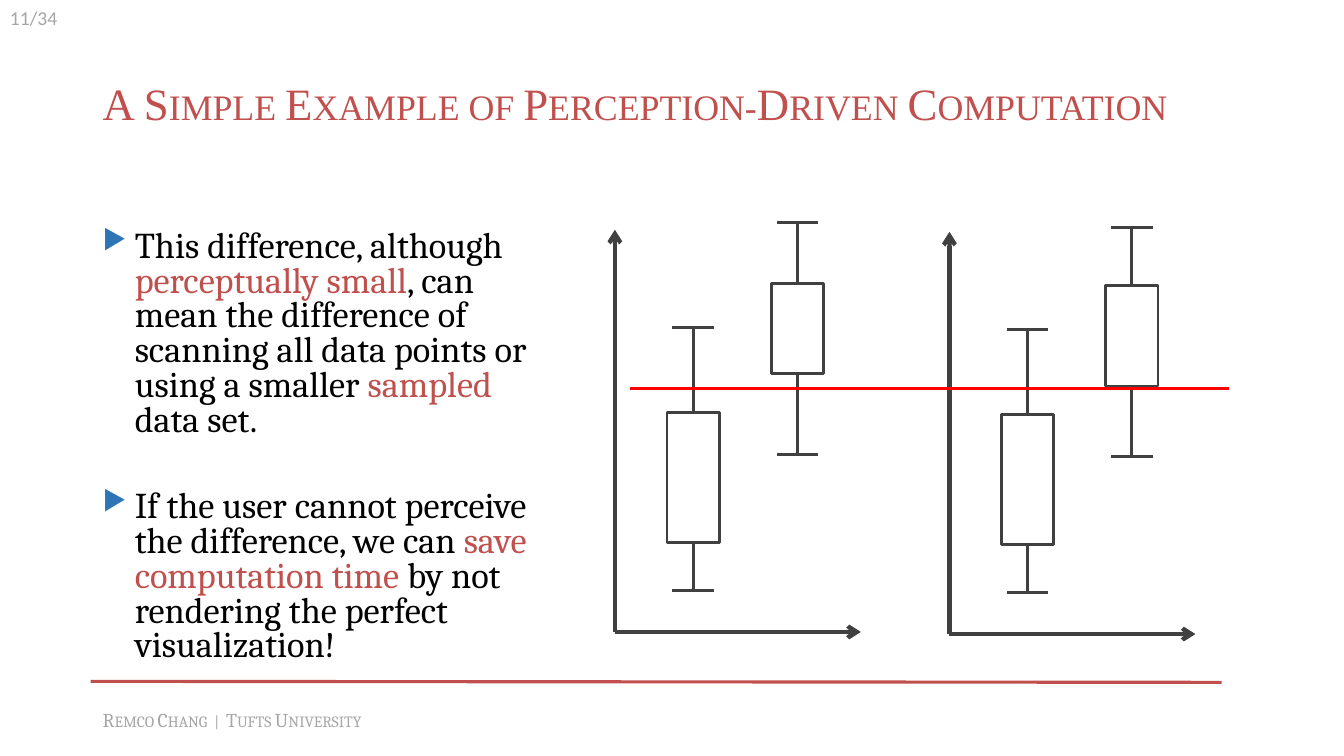
"""Build the slide on perception-driven computation with two box plots."""
from lxml.etree import SubElement
from pptx import Presentation
from pptx.dml.color import RGBColor
from pptx.enum.shapes import MSO_CONNECTOR, MSO_SHAPE
from pptx.enum.text import MSO_ANCHOR
from pptx.oxml.ns import qn
from pptx.util import Pt

COLORS = {
    "accent": "C0504D",
    "muted": "A6A6A6",
    "text": "000000",
    "bullet": "2E75B6",
    "plot": "404040",
    "threshold": "FF0000",
}

presentation = Presentation()
presentation.slide_width, presentation.slide_height = Pt(960), Pt(540)
slide = presentation.slides.add_slide(presentation.slide_layouts[6])


def add_line(start, end, color, width, arrow=False):
    ends = [Pt(value) for value in (*start, *end)]
    connector = slide.shapes.add_connector(MSO_CONNECTOR.STRAIGHT, *ends)
    connector.line.color.rgb = RGBColor.from_string(COLORS[color])
    connector.line.width = Pt(width)
    properties = connector._element.spPr
    if arrow:
        SubElement(properties.get_or_add_ln(), qn("a:tailEnd"), type="arrow")
    SubElement(properties, qn("a:effectLst"))
    return connector


def add_run(paragraph, text, font_format, color, small_caps=False):
    run = paragraph.add_run()
    run.text = text
    for name, value in font_format.items():
        setattr(run.font, name, value)
    run.font.color.rgb = RGBColor.from_string(COLORS[color])
    if small_caps:
        run._r.get_or_add_rPr().set("cap", "small")


add_line((64.8, 486.7), (872.6, 487.4), "accent", 2.25)

labels = [
    ("Remco Chang  |  Tufts University", (66.2, 501.8, 252.7, 24.5), "Cambria", 14, "muted", True),
    ("11/34", (0, 0.7, 200, 24.5), "Calibri", 14, "muted", False),
    ("A Simple Example of Perception-Driven Computation", (66.2, 40.3, 807.8, 65.5),
     "Times New Roman", 32, "accent", True),
]
for text, box, font_name, size, color, small_caps in labels:
    frame = slide.shapes.add_textbox(*[Pt(value) for value in box]).text_frame
    frame.word_wrap = True
    frame.vertical_anchor = MSO_ANCHOR.MIDDLE
    add_run(frame.paragraphs[0], text, {"name": font_name, "size": Pt(size)}, color, small_caps)

bullets = [
    [("This difference, although ", "text"), ("perceptually small", "accent"),
     (", can mean the difference of scanning all data points or using a smaller ", "text"),
     ("sampled", "accent"), (" data set.", "text")],
    [("If the user cannot perceive the difference, we can ", "text"),
     ("save computation time", "accent"),
     (" by not rendering the perfect visualization!", "text")],
]
body = slide.shapes.add_textbox(Pt(66.2), Pt(161), Pt(339.1), Pt(320)).text_frame
body.word_wrap = True
for index, runs in enumerate(bullets):
    paragraph = body.add_paragraph() if index else body.paragraphs[0]
    paragraph.line_spacing = 0.8
    paragraph.space_before = Pt(36.6 if index else 0)
    properties = paragraph._p.get_or_add_pPr()
    properties.set("marL", str(Pt(23)))
    properties.set("indent", str(Pt(-23)))
    bullet_color = SubElement(properties, qn("a:buClr"))
    SubElement(bullet_color, qn("a:srgbClr"), val=COLORS["bullet"])
    SubElement(properties, qn("a:buSzPct"), val="75000")
    SubElement(properties, qn("a:buChar"), char="▶")
    for text, color in runs:
        add_run(paragraph, text, {"name": "Cambria", "size": Pt(25.9)}, color)

box_width, cap_width = 37.4, 29.5
plots = [
    ((678.2, 452.9), [(789.8, 162.4, 203.8, 275.8, 326.2), (715.4, 235.1, 295.9, 388.8, 423)]),
    ((439.2, 451.4), [(550.8, 159.1, 202.3, 267.1, 324.9), (476.4, 234, 294.5, 387.4, 421.9)]),
]
for (origin_x, origin_y), boxes in plots:
    add_line((origin_x, origin_y), (origin_x, origin_y - 287.3), "plot", 3, arrow=True)
    add_line((origin_x, origin_y), (origin_x + 175.7, origin_y), "plot", 3, arrow=True)
    for left, maximum, upper, lower, minimum in boxes:
        quartile_box = slide.shapes.add_shape(
            MSO_SHAPE.RECTANGLE, Pt(left), Pt(upper), Pt(box_width), Pt(lower - upper))
        quartile_box.shadow.inherit = False
        quartile_box.fill.background()
        quartile_box.line.color.rgb = RGBColor.from_string(COLORS["plot"])
        quartile_box.line.width = Pt(2)
        center = left + box_width / 2
        for edge, extreme, site in ((upper, maximum, 0), (lower, minimum, 2)):
            whisker = add_line((center, edge), (center, extreme), "plot", 2)
            whisker.begin_connect(quartile_box, site)
            add_line((center - cap_width / 2, extreme), (center + cap_width / 2, extreme), "plot", 2)

add_line((450, 277.2), (877.7, 277.2), "threshold", 2.25)

presentation.save("out.pptx")
